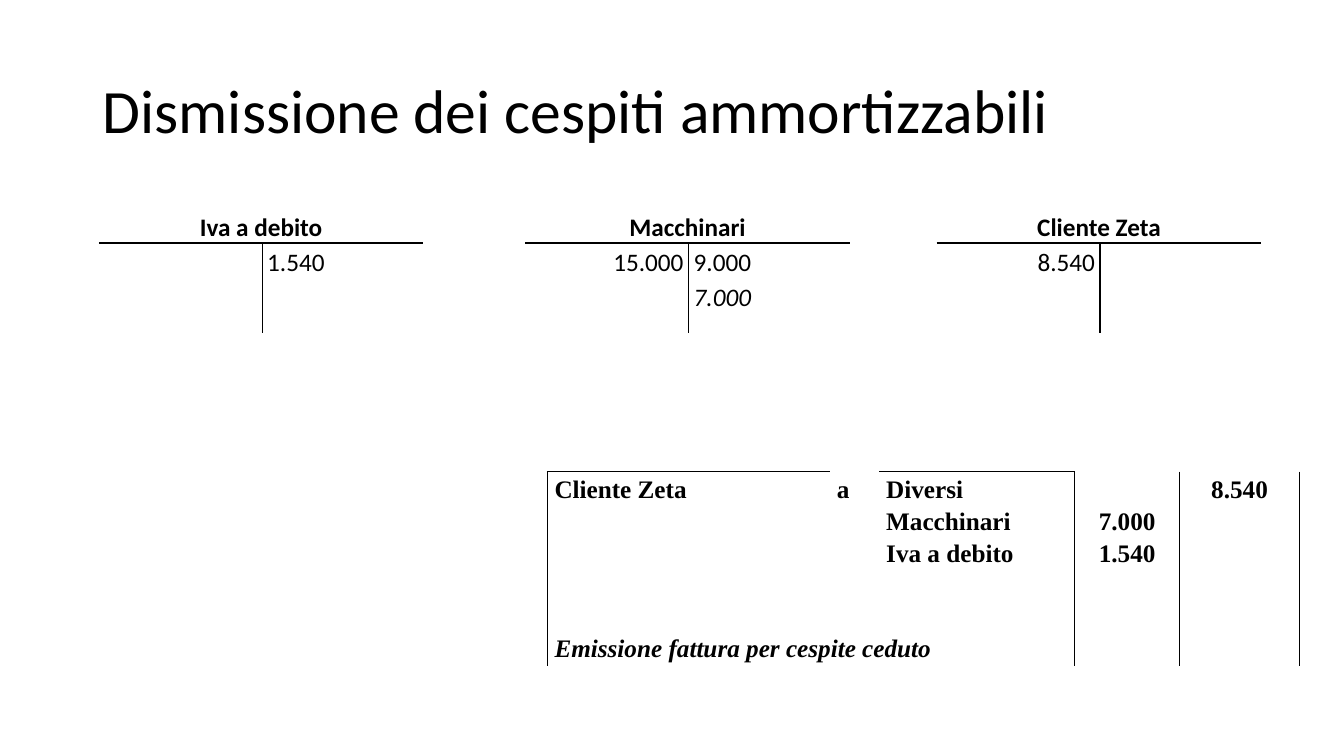
"""Slide on the disposal of depreciable assets: three T accounts and a journal entry."""
from lxml import etree
from pptx import Presentation
from pptx.dml.color import RGBColor
from pptx.enum.text import MSO_ANCHOR, PP_ALIGN
from pptx.util import Pt

LEFT, MID, RIGHT = PP_ALIGN.LEFT, PP_ALIGN.CENTER, PP_ALIGN.RIGHT
PX = 9144
COLORS = {"ink": "000000"}
INK = RGBColor.from_string(COLORS["ink"])
NS = "http://schemas.openxmlformats.org/drawingml/2006/main"
PLAIN = "{2D5ABB26-0587-4C30-8999-92F81FD0307C}"


def add_grid(left, top, cols, rows):
    frame = slide.shapes.add_table(len(rows), len(cols), left * PX, top * PX,
                                   sum(cols) * PX, sum(rows) * PX)
    grid = frame.table
    grid.first_row = grid.horz_banding = False
    grid._tbl.tblPr[0].text = PLAIN
    for col, width in zip(grid.columns, cols):
        col.width = width * PX
    for row, height in zip(grid.rows, rows):
        row.height = height * PX
    return grid


def set_cell(cell, lines, align, edges, font, inset, bold=True, slant=()):
    cell.margin_left = cell.margin_right = inset * PX
    cell.margin_top = cell.margin_bottom = 0
    cell.fill.background()
    cell.text = "\n".join(lines)
    for i, para in enumerate(cell.text_frame.paragraphs):
        para.alignment = align
        para.line_spacing = 1.15
        para.font.name, para.font.size = font, Pt(18)
        para.font.bold, para.font.italic = bold, i in slant
        para.font.color.rgb = INK
    props = cell._tc.get_or_add_tcPr()
    for i, edge in enumerate(edges):
        line = etree.Element(f"{{{NS}}}ln{edge}", w=str(Pt(1)))
        paint = etree.SubElement(line, f"{{{NS}}}solidFill")
        etree.SubElement(paint, f"{{{NS}}}srgbClr", val=COLORS["ink"])
        props.insert(i, line)


deck = Presentation()
deck.slide_width, deck.slide_height = 1333 * PX, 750 * PX
slide = deck.slides.add_slide(deck.slide_layouts[6])

box = slide.shapes.add_textbox(92 * PX, 40 * PX, 1150 * PX, 145 * PX)
box.text_frame.word_wrap = True
box.text_frame.vertical_anchor = MSO_ANCHOR.MIDDLE
title = box.text_frame.paragraphs[0]
title.text = "Dismissione dei cespiti ammortizzabili"
title.line_spacing = 0.9
title.font.name, title.font.size = "Calibri", Pt(44)
title.font.color.rgb = INK

ACCOUNTS = [
    (98, "Iva a debito", [], ["1.540"]),
    (521, "Macchinari", ["15.000"], ["9.000", "7.000"]),
    (929, "Cliente Zeta", ["8.540"], []),
]
for left, name, debit, credit in ACCOUNTS:
    grid = add_grid(left, 206, [162, 160], [35, 89])
    head = grid.cell(0, 0)
    head.merge(grid.cell(0, 1))
    set_cell(head, [name], MID, "B", "Calibri", 5)
    set_cell(grid.cell(1, 0), debit, RIGHT, "RT", "Calibri", 5, False)
    set_cell(grid.cell(1, 1), credit, LEFT, "LT", "Calibri", 5, False, (1,))

ENTRY = [
    (["Cliente Zeta"], LEFT, "LT"),
    (["a"], LEFT, ""),
    (["Diversi", "Macchinari", "Iva a debito"], LEFT, "RT"),
    (["7.000", "1.540"], MID, "LR"),
    (["8.540"], MID, "LR"),
]
journal = add_grid(543, 468, [280, 49, 194, 104, 119], [118, 40, 33])
for col, (lines, align, edges) in enumerate(ENTRY):
    set_cell(journal.cell(0, col), lines, align, edges, "Times New Roman", 7)
journal.cell(0, 3).margin_top = 32 * PX
for row, note in (1, []), (2, ["Emissione fattura per cespite ceduto"]):
    wide = journal.cell(row, 0)
    wide.merge(journal.cell(row, 2))
    set_cell(wide, note, LEFT, "LR", "Times New Roman", 7, slant=(0,))
    for col in 3, 4:
        set_cell(journal.cell(row, col), [], MID, "LR", "Times New Roman", 7)

deck.save("out.pptx")
